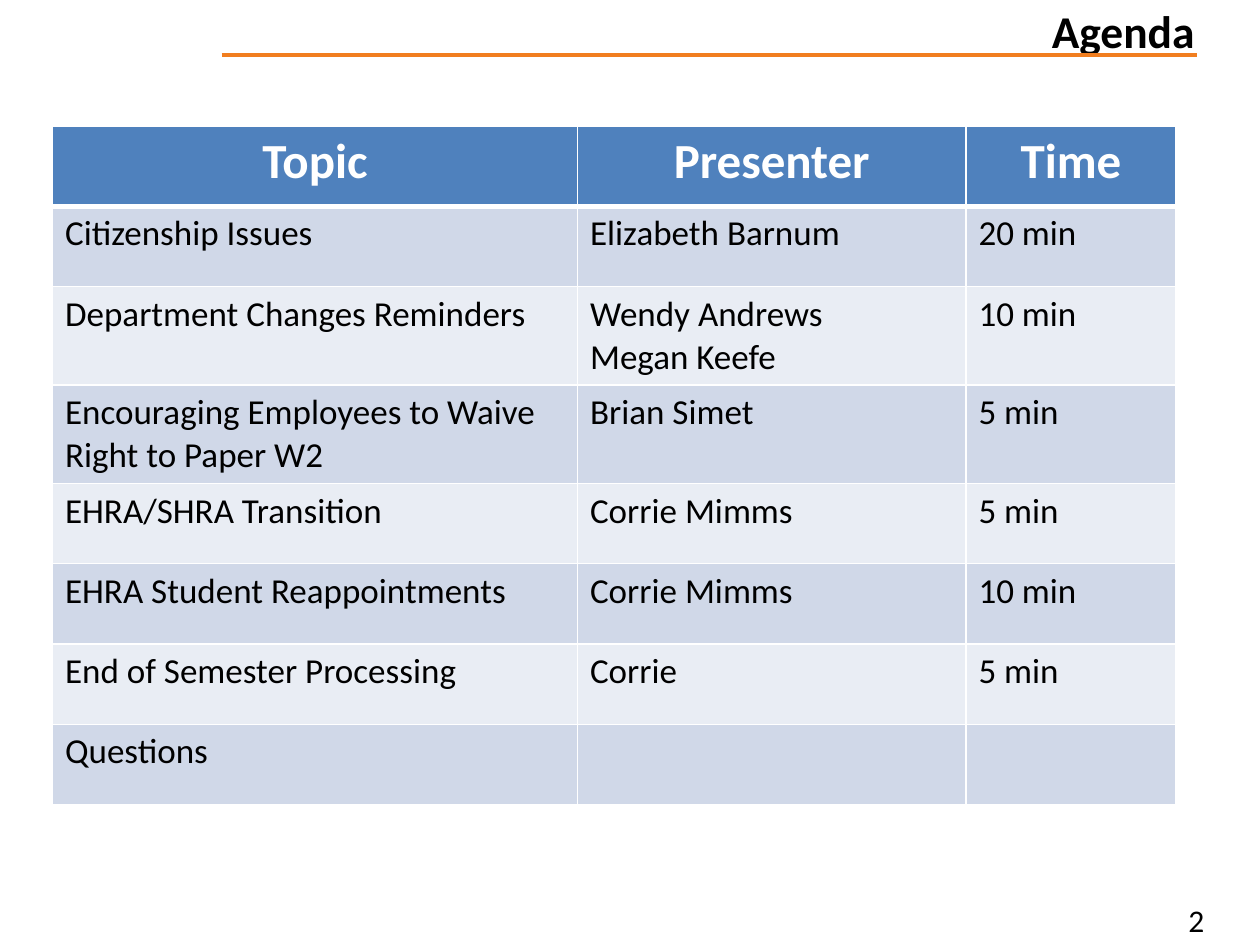
from dataclasses import dataclass
from typing import NamedTuple

from lxml.etree import SubElement
from pptx import Presentation
from pptx.dml.color import RGBColor
from pptx.enum.shapes import MSO_CONNECTOR as Connector
from pptx.enum.text import MSO_ANCHOR as Anchor, PP_ALIGN as Align
from pptx.oxml.ns import qn
from pptx.util import Inches, Pt

GRID = Inches(1 / 12)


@dataclass(frozen=True)
class Theme:
    font: str = "Calibri"
    black: str = "000000"
    white: str = "FFFFFF"
    accent: str = "F17E1F"
    header: str = "4F81BD"
    bands: tuple = ("D0D8E8", "E9EDF4")
    title_size: int = 26
    header_size: int = 28
    body_size: int = 20
    number_size: int = 18


class Area(NamedTuple):
    column: float
    row: float
    columns: float
    rows: float


class AgendaItem(NamedTuple):
    topic: str
    presenter: str = ""
    time: str = ""


THEME = Theme()
TITLE_AREA = Area(50, -0.6, 65, 7)
TABLE_AREA = Area(5, 12, 107, 61.2)
NUMBER_AREA = Area(112, 85.2, 8, 4.8)
COLUMN_WIDTHS = (50, 37, 20)
HEADER = AgendaItem("Topic", "Presenter", "Time")
ITEMS = (
    AgendaItem("Citizenship Issues", "Elizabeth Barnum", "20 min"),
    AgendaItem("Department Changes Reminders", "Wendy Andrews\vMegan Keefe", "10 min"),
    AgendaItem("Encouraging Employees to Waive Right to Paper W2", "Brian Simet", "5 min"),
    AgendaItem("EHRA/SHRA Transition", "Corrie Mimms", "5 min"),
    AgendaItem("EHRA Student Reappointments", "Corrie Mimms", "10 min"),
    AgendaItem("End of Semester Processing", "Corrie", "5 min"),
    AgendaItem("Questions"),
)


def units(count: float) -> int:
    return round(count * GRID)


def place(area: Area) -> list[int]:
    return [units(value) for value in area]


def write(frame, text: str, *, size: int, color: str = THEME.black,
          bold: bool = False, align=Align.LEFT) -> None:
    frame.word_wrap = True
    para = frame.paragraphs[0]
    para.text = text
    para.alignment = align
    for span in para.runs:
        span.font.name = THEME.font
        span.font.size = Pt(size)
        span.font.bold = bold
        span.font.color.rgb = RGBColor.from_string(color)


def add_title(page, text: str) -> None:
    title = page.shapes.title
    title.left, title.top, title.width, title.height = place(TITLE_AREA)
    title.text_frame.vertical_anchor = Anchor.MIDDLE
    write(title.text_frame, text, size=THEME.title_size, bold=True, align=Align.RIGHT)


def add_rule(page, start: float, end: float, row: float) -> None:
    rule = page.shapes.add_connector(
        Connector.STRAIGHT, units(start), units(row), units(end), units(row))
    rule.line.color.rgb = RGBColor.from_string(THEME.accent)
    rule.line.width = Pt(2)
    SubElement(rule._element.spPr, qn("a:effectLst"))


def style_cell(cell, fill: str, top: int = 1, bottom: int = 1) -> None:
    properties = cell._tc.get_or_add_tcPr()
    for side, width in (("L", 1), ("R", 1), ("T", top), ("B", bottom)):
        border = SubElement(properties, qn(f"a:ln{side}"), w=str(Pt(width)))
        paint = SubElement(border, qn("a:solidFill"))
        SubElement(paint, qn("a:srgbClr"), val=THEME.white)
    cell.fill.solid()
    cell.fill.fore_color.rgb = RGBColor.from_string(fill)


def add_agenda(page) -> None:
    table = page.shapes.add_table(
        len(ITEMS) + 1, len(COLUMN_WIDTHS), *place(TABLE_AREA)).table
    for column, width in zip(table.columns, COLUMN_WIDTHS):
        column.width = units(width)
    for index, text in enumerate(HEADER):
        cell = table.cell(0, index)
        style_cell(cell, THEME.header, bottom=3)
        write(cell.text_frame, text, size=THEME.header_size, color=THEME.white,
              bold=True, align=Align.CENTER)
    for row, item in enumerate(ITEMS, start=1):
        for index, text in enumerate(item):
            cell = table.cell(row, index)
            style_cell(cell, THEME.bands[(row - 1) % 2], top=3 if row == 1 else 1)
            write(cell.text_frame, text, size=THEME.body_size)


def main() -> None:
    deck = Presentation()
    deck.slide_width, deck.slide_height = units(120), units(90)
    page = deck.slides.add_slide(deck.slide_layouts[5])
    add_rule(page, 21.1, 114, 5.25)
    add_title(page, "Agenda")
    add_agenda(page)
    number = page.shapes.add_textbox(*place(NUMBER_AREA))
    write(number.text_frame, "2", size=THEME.number_size)
    deck.save("out.pptx")


if __name__ == "__main__":
    main()
